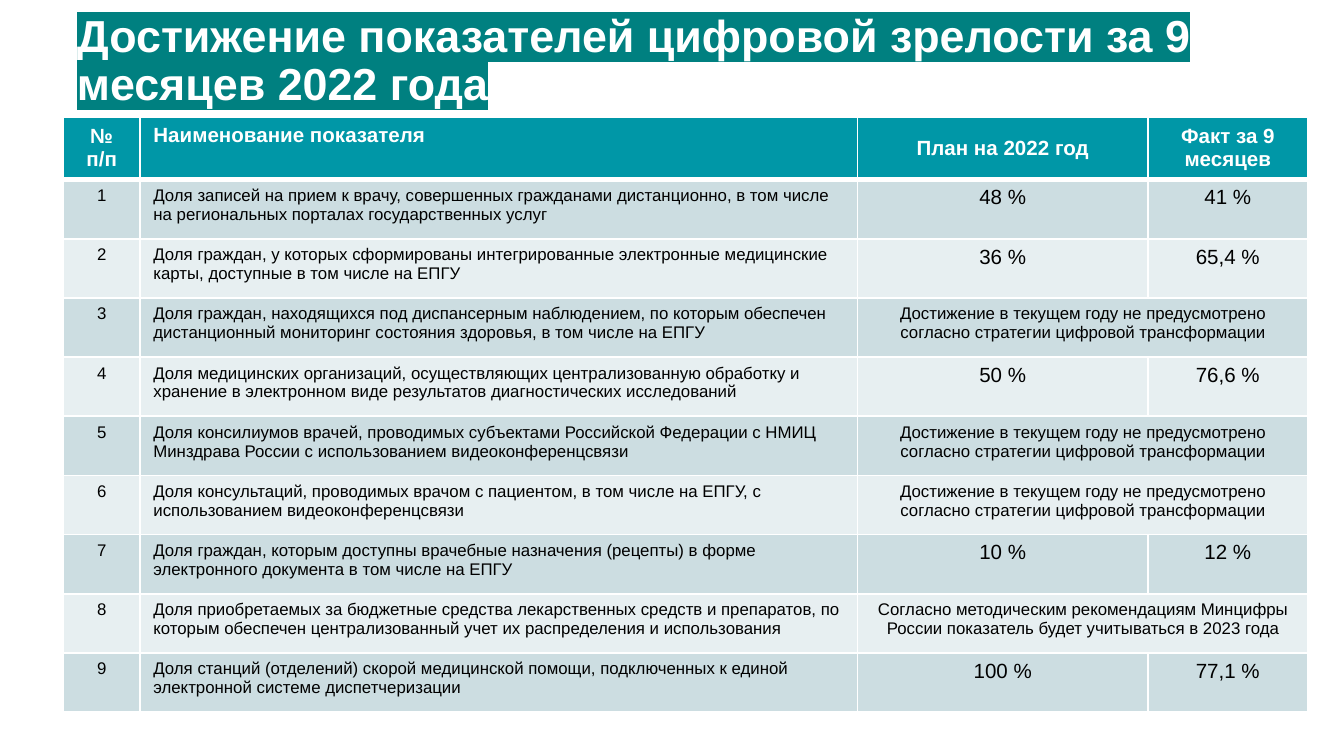
from dataclasses import dataclass

from lxml.etree import SubElement
from pptx import Presentation
from pptx.dml.color import RGBColor
from pptx.enum.text import MSO_ANCHOR, MSO_AUTO_SIZE, PP_ALIGN
from pptx.oxml.ns import qn
from pptx.util import Pt


@dataclass(frozen=True)
class Theme:
    """Colours, font and type sizes of the slide."""
    font: str = "Arial"
    white: str = "FFFFFF"
    black: str = "000000"
    highlight: str = "008080"
    header: str = "0097A7"
    bands: tuple = ("CCDDE1", "E7EFF1")
    title_size: int = 24
    large_size: int = 11
    body_size: int = 9


def write_text(frame, text, *, font, size, color, bold=False,
               align=PP_ALIGN.LEFT, line_spacing=None, highlight=None):
    """Put formatted text into the first paragraph of a frame."""
    paragraph = frame.paragraphs[0]
    paragraph.alignment = align
    if line_spacing:
        paragraph.line_spacing = line_spacing
    run = paragraph.add_run()
    run.text = text
    run.font.size = Pt(size)
    run.font.bold = bold
    run.font.color.rgb = RGBColor.from_string(color)
    if highlight:
        properties = run.font._element
        mark = SubElement(properties, qn("a:highlight"))
        SubElement(mark, qn("a:srgbClr"), val=highlight)
    run.font.name = font


def set_borders(cell, color, widths):
    """Draw the four cell borders with widths in points."""
    properties = cell._tc.get_or_add_tcPr()
    for index, (side, width) in enumerate(zip("LRTB", widths)):
        line = SubElement(properties, qn(f"a:ln{side}"), w=str(Pt(width)))
        fill = SubElement(line, qn("a:solidFill"))
        SubElement(fill, qn("a:srgbClr"), val=color)
        properties.insert(index, line)


class SlideBuilder:
    """Holds the theme and the current slide."""

    def __init__(self, presentation, theme):
        """Add a title-only slide."""
        self.theme = theme
        self.slide = presentation.slides.add_slide(presentation.slide_layouts[5])

    def add_title(self, text, left, top, width, height):
        """Place and format the title placeholder."""
        title = self.slide.shapes.title
        title.left, title.top, title.width, title.height = map(Pt, (left, top, width, height))
        frame = title.text_frame
        frame.word_wrap = True
        frame.auto_size = MSO_AUTO_SIZE.SHAPE_TO_FIT_TEXT
        frame.vertical_anchor = MSO_ANCHOR.TOP
        frame.margin_left = frame.margin_right = Pt(7.2)
        frame.margin_top = frame.margin_bottom = Pt(7.2)
        write_text(frame, text, font=self.theme.font, size=self.theme.title_size,
                   color=self.theme.white, bold=True, line_spacing=0.9,
                   highlight=self.theme.highlight)

    def add_cell(self, cell, text, row, column, size):
        """Fill, border and write one table cell."""
        theme = self.theme
        is_header = row == 0
        cell.fill.solid()
        cell.fill.fore_color.rgb = RGBColor.from_string(
            theme.header if is_header else theme.bands[(row - 1) % 2])
        set_borders(cell, theme.white, (1, 1, 3 if row == 1 else 1, 3 if is_header else 1))
        cell.vertical_anchor = (
            MSO_ANCHOR.MIDDLE if is_header and column != 1 else MSO_ANCHOR.TOP)
        if text:
            write_text(cell.text_frame, text, font=theme.font, size=size, bold=is_header,
                       color=theme.white if is_header else theme.black,
                       align=PP_ALIGN.LEFT if column == 1 else PP_ALIGN.CENTER)

    def add_table(self, header, indicators, left, top, column_widths, row_height):
        """Add the indicator table, merging plan and fact where there is only a note."""
        rows = [header] + [(str(number), *indicator)
                           for number, indicator in enumerate(indicators, 1)]
        table = self.slide.shapes.add_table(
            len(rows), len(header), Pt(left), Pt(top),
            Pt(sum(column_widths)), Pt(row_height * len(rows))).table
        table.first_row = table.horz_banding = False
        for column, width in zip(table.columns, column_widths):
            column.width = Pt(width)
        for row, values in enumerate(rows):
            table.rows[row].height = Pt(row_height)
            has_note = len(values) < len(header)
            if has_note:
                table.cell(row, 2).merge(table.cell(row, 3))
                values = (*values, "")
            for column, text in enumerate(values):
                is_large = row == 0 or (column > 1 and not has_note)
                size = self.theme.large_size if is_large else self.theme.body_size
                self.add_cell(table.cell(row, column), text, row, column, size)


NOT_PLANNED = ("Достижение в текущем году не предусмотрено "
               "согласно стратегии цифровой трансформации")
HEADER = ("№ п/п", "Наименование показателя", "План на 2022 год", "Факт за 9 месяцев")
INDICATORS = [
    ("Доля записей на прием к врачу, совершенных гражданами дистанционно, "
     "в том числе на региональных порталах государственных услуг", "48 %", "41 %"),
    ("Доля граждан, у которых сформированы интегрированные электронные медицинские "
     "карты, доступные в том числе на ЕПГУ", "36 %", "65,4 %"),
    ("Доля граждан, находящихся под диспансерным наблюдением, по которым обеспечен "
     "дистанционный мониторинг состояния здоровья, в том числе на ЕПГУ", NOT_PLANNED),
    ("Доля медицинских организаций, осуществляющих централизованную обработку и "
     "хранение в электронном виде результатов диагностических исследований",
     "50 %", "76,6 %"),
    ("Доля консилиумов врачей, проводимых субъектами Российской Федерации с НМИЦ "
     "Минздрава России с использованием видеоконференцсвязи", NOT_PLANNED),
    ("Доля консультаций, проводимых врачом с пациентом, в том числе на ЕПГУ, "
     "с использованием видеоконференцсвязи", NOT_PLANNED),
    ("Доля граждан, которым доступны врачебные назначения (рецепты) в форме "
     "электронного документа в том числе на ЕПГУ", "10 %", "12 %"),
    ("Доля приобретаемых за бюджетные средства лекарственных средств и препаратов, "
     "по которым обеспечен централизованный учет их распределения и использования",
     "Согласно методическим рекомендациям Минцифры "
     "России показатель будет учитываться в 2023 года"),
    ("Доля станций (отделений) скорой медицинской помощи, подключенных к единой "
     "электронной системе диспетчеризации", "100 %", "77,1 %"),
]


def main():
    """Build and save the presentation."""
    presentation = Presentation()
    presentation.slide_width, presentation.slide_height = Pt(720), Pt(405)
    builder = SlideBuilder(presentation, Theme())
    builder.add_title("Достижение показателей цифровой зрелости за 9 месяцев 2022 года",
                      34, 0, 672.5, 67)
    builder.add_table(HEADER, INDICATORS, 34, 62.6, (41, 384.5, 155.5, 85.7), 31.7)
    presentation.save("out.pptx")


if __name__ == "__main__":
    main()
